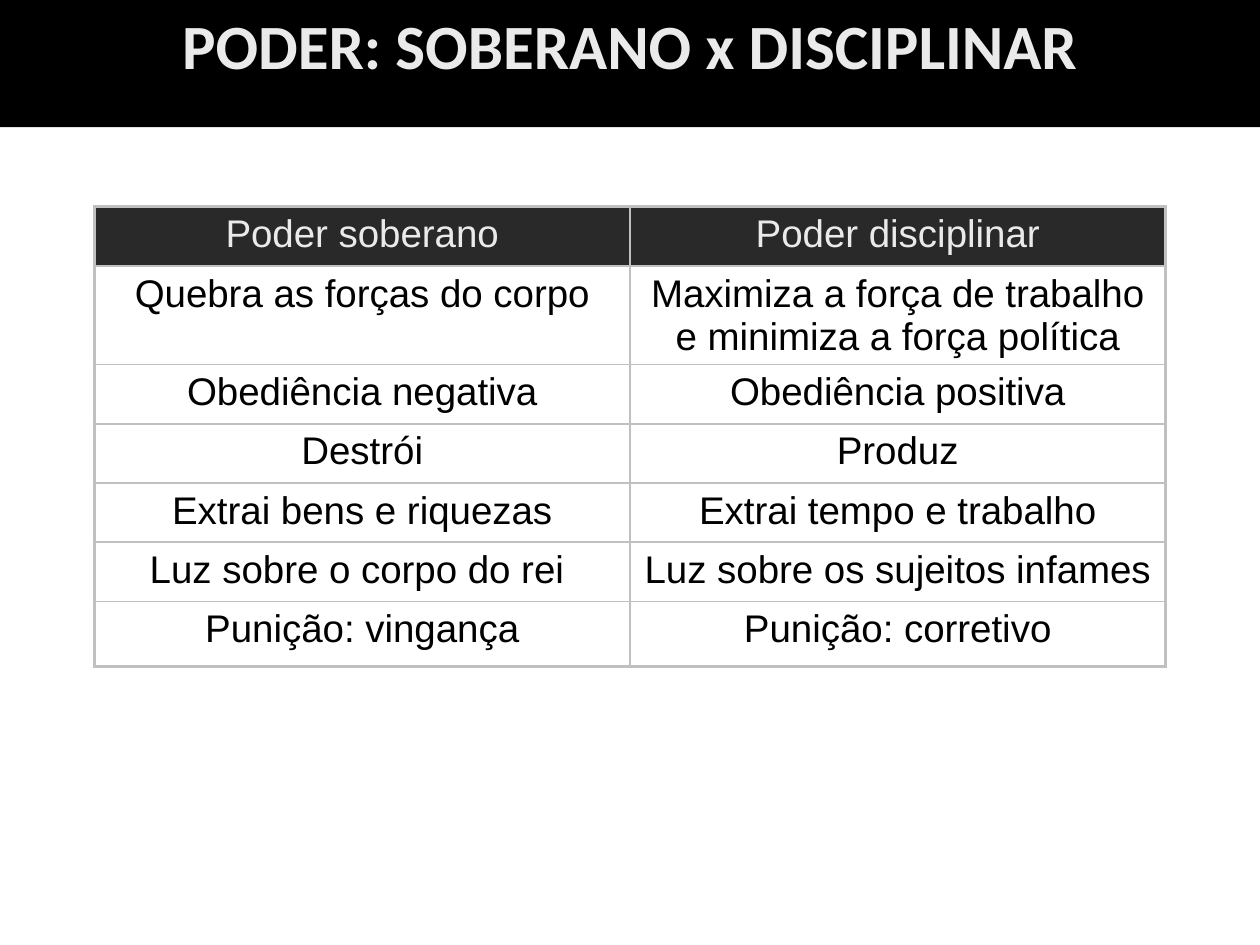
from lxml.etree import SubElement
from pptx import Presentation
from pptx.dml.color import RGBColor
from pptx.enum.text import MSO_ANCHOR, MSO_AUTO_SIZE, PP_ALIGN
from pptx.oxml.ns import qn
from pptx.util import Inches, Pt

TITLE = "PODER: SOBERANO x DISCIPLINAR"
ROWS = [
    ("Poder soberano", "Poder disciplinar"),
    ("Quebra as forças do corpo", "Maximiza a força de trabalho e minimiza a força política"),
    ("Obediência negativa", "Obediência positiva"),
    ("Destrói", "Produz"),
    ("Extrai bens e riquezas", "Extrai tempo e trabalho"),
    ("Luz sobre o corpo do rei ", "Luz sobre os sujeitos infames"),
    ("Punição: vingança", "Punição: corretivo"),
]
COLORS = {
    "band": "000000",
    "light": "EAEAEA",
    "header": "292929",
    "body": "FFFFFF",
    "text": "000000",
    "border": "C0C0C0",
}
WIDTH, HEIGHT = 10, 7.5
BAND_HEIGHT = 1.01
MARGIN, TABLE_TOP = 0.75, 1.64
ROW_HEIGHT, LAST_ROW_HEIGHT = 0.47, 0.52
OUTER_LINE, INNER_LINE = 2, 1


def color(name):
    return RGBColor.from_string(COLORS[name])


def write(text_frame, text, font_name, size, color_name, bold=False):
    paragraph = text_frame.paragraphs[0]
    paragraph.alignment = PP_ALIGN.CENTER
    run = paragraph.add_run()
    run.text = text
    run.font.name = font_name
    run.font.size = Pt(size)
    run.font.bold = bold
    run.font.color.rgb = color(color_name)


def set_borders(cell, outer_sides):
    properties = cell._tc.get_or_add_tcPr()
    for side, is_outer in outer_sides.items():
        points = OUTER_LINE if is_outer else INNER_LINE
        line = SubElement(properties, qn(f"a:ln{side}"), w=str(Pt(points)))
        fill = SubElement(line, qn("a:solidFill"))
        SubElement(fill, qn("a:srgbClr"), val=COLORS["border"])


def add_title(slide):
    title = slide.shapes.title
    title.left, title.top = 0, 0
    title.width, title.height = Inches(WIDTH), Inches(BAND_HEIGHT)
    title.fill.solid()
    title.fill.fore_color.rgb = color("band")
    title.text_frame.auto_size = MSO_AUTO_SIZE.NONE
    title.text_frame.vertical_anchor = MSO_ANCHOR.TOP
    write(title.text_frame, TITLE, "Calibri", 36, "light", bold=True)


def add_comparison(slide):
    last_row, last_column = len(ROWS) - 1, len(ROWS[0]) - 1
    table_height = ROW_HEIGHT * last_row + LAST_ROW_HEIGHT
    table = slide.shapes.add_table(
        len(ROWS), len(ROWS[0]), Inches(MARGIN), Inches(TABLE_TOP),
        Inches(WIDTH - 2 * MARGIN), Inches(table_height),
    ).table
    for row_index, texts in enumerate(ROWS):
        is_header = row_index == 0
        is_last = row_index == last_row
        table.rows[row_index].height = Inches(LAST_ROW_HEIGHT if is_last else ROW_HEIGHT)
        for column_index, text in enumerate(texts):
            cell = table.cell(row_index, column_index)
            set_borders(cell, {
                "L": column_index == 0,
                "R": column_index == last_column,
                "T": is_header,
                "B": is_last,
            })
            cell.fill.solid()
            cell.fill.fore_color.rgb = color("header" if is_header else "body")
            write(cell.text_frame, text, "Arial", 22, "light" if is_header else "text")


def main():
    presentation = Presentation()
    presentation.slide_width = Inches(WIDTH)
    presentation.slide_height = Inches(HEIGHT)
    slide = presentation.slides.add_slide(presentation.slide_layouts[5])
    add_title(slide)
    add_comparison(slide)
    presentation.save("out.pptx")


if __name__ == "__main__":
    main()
